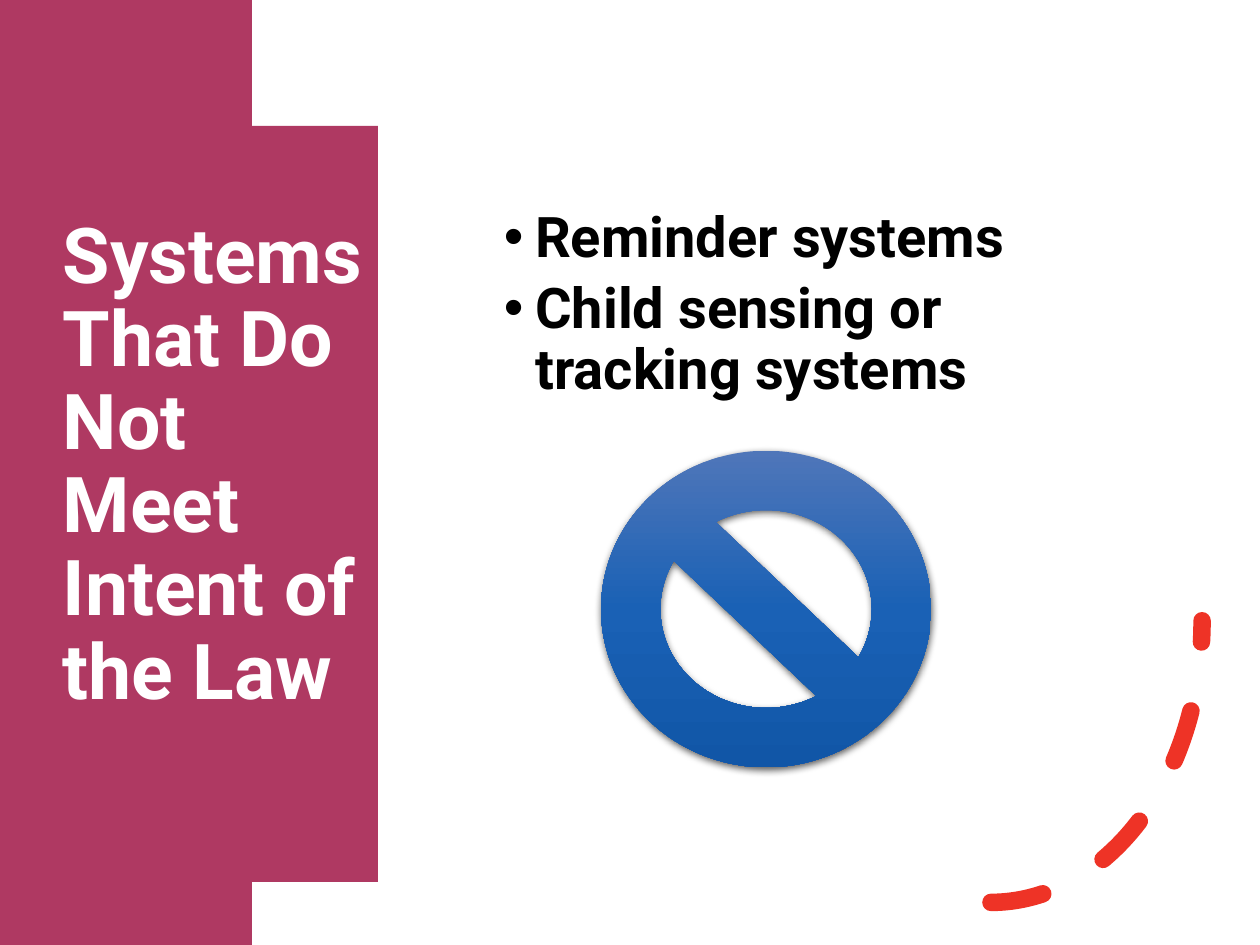
from copy import deepcopy
from dataclasses import dataclass

from lxml.etree import SubElement
from pptx import Presentation
from pptx.dml.color import RGBColor
from pptx.enum.dml import MSO_LINE
from pptx.enum.shapes import MSO_SHAPE
from pptx.enum.text import MSO_ANCHOR
from pptx.oxml.ns import qn
from pptx.util import Emu, Inches, Pt

WIDTH, HEIGHT = Inches(10), Inches(7.5)
WHITE, BLACK, BERRY, RED = "FFFFFF", "000000", "AF3962", "EE3326"
SIGN_BLUES = ("4F76B9", "1A61B5", "1156A7")


@dataclass(frozen=True)
class Area:
    """A rectangle in shares of the slide's width and height."""
    left: float
    top: float
    width: float
    height: float

    def box(self) -> tuple[Emu, Emu, Emu, Emu]:
        return (Emu(round(self.left * WIDTH)), Emu(round(self.top * HEIGHT)),
                Emu(round(self.width * WIDTH)), Emu(round(self.height * HEIGHT)))


@dataclass(frozen=True)
class TextBlock:
    area: Area
    paragraphs: tuple[str, ...]
    size: int
    color: str
    bulleted: bool = False


TITLE = TextBlock(Area(0.04, 0.168, 0.262, 0.651),
                  ("Systems That Do Not Meet \vIntent of the Law",), 44, WHITE)
SYSTEMS = TextBlock(Area(0.365, 0.087, 0.566, 0.472),
                    ("Reminder systems", "Child sensing or tracking systems"),
                    32, BLACK, bulleted=True)
SIGN = Area(0.477, 0.477, 0.262, 0.335)
ARC = Area(0.619, 0.359, 0.335, 0.596)


def rgb(color: str) -> RGBColor:
    return RGBColor.from_string(color)


def add_bullet(paragraph) -> None:
    properties = paragraph._p.get_or_add_pPr()
    properties.set("marL", str(Inches(0.5)))
    properties.set("indent", str(-Inches(0.25)))
    SubElement(properties, qn("a:buFont"), typeface="Arial")
    SubElement(properties, qn("a:buChar"), char="•")


def add_text(slide, block: TextBlock) -> None:
    frame = slide.shapes.add_textbox(*block.area.box()).text_frame
    frame.word_wrap = True
    frame.vertical_anchor = MSO_ANCHOR.MIDDLE
    for index, text in enumerate(block.paragraphs):
        paragraph = frame.add_paragraph() if index else frame.paragraphs[0]
        paragraph.text = text
        if block.bulleted:
            add_bullet(paragraph)
            paragraph.space_after = Pt(6)
        paragraph.line_spacing = 0.9
        font = paragraph.font
        font.name, font.size, font.bold = "Roboto", Pt(block.size), True
        font.color.rgb = rgb(block.color)


def bezier(points: list[tuple[float, float]], steps: int = 60) -> list[tuple[float, float]]:
    """Sample a cubic curve given by its four control points."""
    def at(t: float) -> tuple[float, float]:
        weights = ((1 - t) ** 3, 3 * t * (1 - t) ** 2, 3 * t * t * (1 - t), t ** 3)
        return (sum(w * x for w, (x, _) in zip(weights, points)),
                sum(w * y for w, (_, y) in zip(weights, points)))
    return [at(step / steps) for step in range(steps + 1)]


def add_side_panel(slide) -> None:
    """Draw the left panel; its lower edge mirrors its upper edge."""
    upper = [(1.85, 0)] + bezier([(1.96, 0.09), (2.84, 0.88), (3.42, 2.23), (3.42, 3.75)])
    lower = [(x, 7.5 - y) for x, y in reversed(upper[:-1])]
    builder = slide.shapes.build_freeform(0, 0, scale=Inches(1))
    builder.add_line_segments(upper + lower + [(0, 7.5)], close=True)
    panel = builder.convert_to_shape()
    panel.shadow.inherit = False
    panel.fill.solid()
    panel.fill.fore_color.rgb = rgb(BERRY)
    panel.line.fill.background()


def add_prohibition_sign(slide) -> None:
    sign = slide.shapes.add_shape(MSO_SHAPE.NO_SYMBOL, *SIGN.box())
    sign.line.fill.background()
    sign.fill.gradient()
    sign.fill.gradient_angle = 270
    stop_list = sign._element.spPr.find(".//" + qn("a:gsLst"))
    stop_list.insert(1, deepcopy(stop_list[0]))
    for index, (stop, color) in enumerate(zip(sign.fill.gradient_stops, SIGN_BLUES)):
        stop.position = index / 2
        stop.color.rgb = rgb(color)

    sign.shadow.inherit = False
    effects = sign._element.spPr.find(qn("a:effectLst"))
    shadow = SubElement(effects, qn("a:outerShdw"), blurRad=str(Pt(4.5)),
                        dist=str(Pt(1.5)), dir="5400000", rotWithShape="0")
    shade = SubElement(shadow, qn("a:srgbClr"), val=BLACK)
    SubElement(shade, qn("a:alpha"), val="63000")


def add_dashed_arc(slide) -> None:
    arc = slide.shapes.add_shape(MSO_SHAPE.ARC, *ARC.box())
    arc.shadow.inherit = False
    arc.fill.background()
    arc.line.color.rgb = rgb(RED)
    arc.line.width = Pt(10)
    arc.line.dash_style = MSO_LINE.DASH
    properties = arc._element.spPr
    properties.find(qn("a:xfrm")).set("flipV", "1")
    properties.find(qn("a:ln")).set("cap", "rnd")


def main() -> None:
    presentation = Presentation()
    presentation.slide_width, presentation.slide_height = WIDTH, HEIGHT
    slide = presentation.slides.add_slide(presentation.slide_layouts[6])
    slide.background.fill.solid()
    slide.background.fill.fore_color.rgb = rgb(WHITE)
    add_side_panel(slide)
    add_text(slide, TITLE)
    add_text(slide, SYSTEMS)
    add_prohibition_sign(slide)
    add_dashed_arc(slide)
    presentation.save("out.pptx")


if __name__ == "__main__":
    main()
